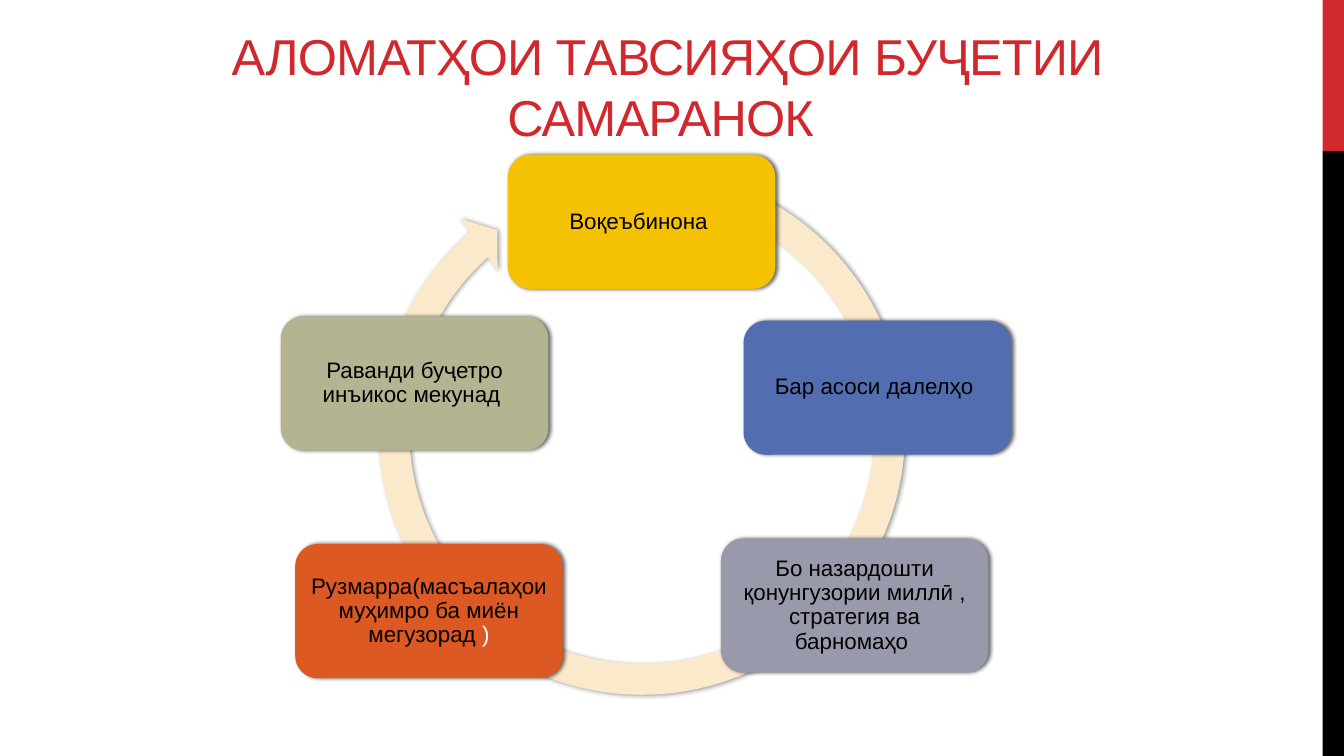
from lxml import etree
from pptx import Presentation
from pptx.dml.color import RGBColor
from pptx.enum.shapes import MSO_SHAPE as Preset
from pptx.enum.text import MSO_ANCHOR as Anchor, MSO_AUTO_SIZE as AutoSize, PP_ALIGN as Align
from pptx.oxml.ns import qn
from pptx.util import Cm, Pt

RED = RGBColor(0xD1, 0x28, 0x2E)
BLACK = RGBColor(0, 0, 0)
WHITE = RGBColor(255, 255, 255)
CREAM = RGBColor(0xFB, 0xE9, 0xCC)
YELLOW = RGBColor(0xF5, 0xC2, 0x01)
BLUE = RGBColor(0x52, 0x6D, 0xB0)
GREY = RGBColor(0x98, 0x9A, 0xAC)
ORANGE = RGBColor(0xDC, 0x59, 0x24)
OLIVE = RGBColor(0xB4, 0xB3, 0x92)
FONT = "Arial"

# Content
TITLE = "АЛОМАТҲОИ ТАВСИЯҲОИ БУҶЕТИИ САМАРАНОК "
# left and top in cm, fill, text runs with their colours
FEATURES = [
    (12.8, 3.9, YELLOW, [("Воқеъбинона ", BLACK)]),
    (18.74, 8.08, BLUE, [("Бар асоси далелҳо ", BLACK)]),
    (18.17, 13.57, GREY, [
        ("Бо назардошти қонунгузории миллӣ , стратегия ва барномаҳо ", BLACK)]),
    (7.44, 13.71, ORANGE, [
        ("Рузмарра(масъалаҳои муҳимро ба миён мегузорад ", BLACK), (")", WHITE)]),
    (7.08, 7.97, OLIVE, [("Раванди буҷетро инъикос мекунад ", BLACK)]),
]
# top and height in cm, fill
SIDE_BARS = [(0, 3.81, RED), (3.81, 15.24, BLACK)]
CYCLE_ADJUSTMENTS = (0.055, 3.307, 137.293, 174.144, 0.058)


def add_filled(slide, preset, left, top, width, height, fill):
    part = slide.shapes.add_shape(preset, Cm(left), Cm(top), Cm(width), Cm(height))
    part.shadow.inherit = False
    part.fill.solid()
    part.fill.fore_color.rgb = fill
    part.line.fill.background()
    return part


def add_shadow(part, opacity, blur, distance):
    effects = part._element.spPr.find(qn("a:effectLst"))
    shadow = etree.SubElement(effects, qn("a:outerShdw"), blurRad=str(Pt(blur)),
                              dist=str(Pt(distance)), dir="0", rotWithShape="0")
    colour = etree.SubElement(shadow, qn("a:srgbClr"), val=str(BLACK))
    etree.SubElement(colour, qn("a:alpha"), val=str(opacity * 1000))


def add_run(paragraph, text, size, colour):
    run = paragraph.add_run()
    run.text = text
    run.font.name = FONT
    run.font.size = Pt(size)
    run.font.color.rgb = colour
    return run


def add_title(slide):
    title = slide.shapes.title
    title.left, title.top, title.width, title.height = Cm(1.7), Cm(0), Cm(30.23), Cm(3.81)
    frame = title.text_frame
    frame.auto_size = AutoSize.NONE
    frame.vertical_anchor = Anchor.BOTTOM
    paragraph = frame.paragraphs[0]
    paragraph.alignment = Align.CENTER
    run = add_run(paragraph, TITLE, 36, RED)
    run.font._element.set("spc", "-60")


def add_feature(slide, left, top, fill, runs):
    feature = add_filled(slide, Preset.ROUNDED_RECTANGLE, left, top, 6.74, 3.38, fill)
    add_shadow(feature, 60, 3, 1.5)
    frame = feature.text_frame
    frame.word_wrap = True
    frame.vertical_anchor = Anchor.MIDDLE
    frame.margin_left = frame.margin_right = Cm(0.17)
    frame.margin_top = frame.margin_bottom = Cm(0.17)
    paragraph = frame.paragraphs[0]
    paragraph.alignment = Align.CENTER
    paragraph.line_spacing = 0.9
    for text, colour in runs:
        add_run(paragraph, text, 16, colour)


def main():
    deck = Presentation()
    deck.slide_width, deck.slide_height = Cm(33.87), Cm(19.05)
    slide = deck.slides.add_slide(deck.slide_layouts[5])

    # Side bars and title
    for top, height, fill in SIDE_BARS:
        add_filled(slide, Preset.RECTANGLE, 33.33, top, 0.54, height, fill)
    add_title(slide)

    # Cycle arrow behind the features
    cycle = add_filled(slide, Preset.CIRCULAR_ARROW, 9.11, 3.81, 14.13, 14.13, CREAM)
    for index, value in enumerate(CYCLE_ADJUSTMENTS):
        cycle.adjustments[index] = value
    add_shadow(cycle, 40, 3.1, 1.8)

    # Features around the cycle
    for feature in FEATURES:
        add_feature(slide, *feature)

    deck.save("out.pptx")


if __name__ == "__main__":
    main()
